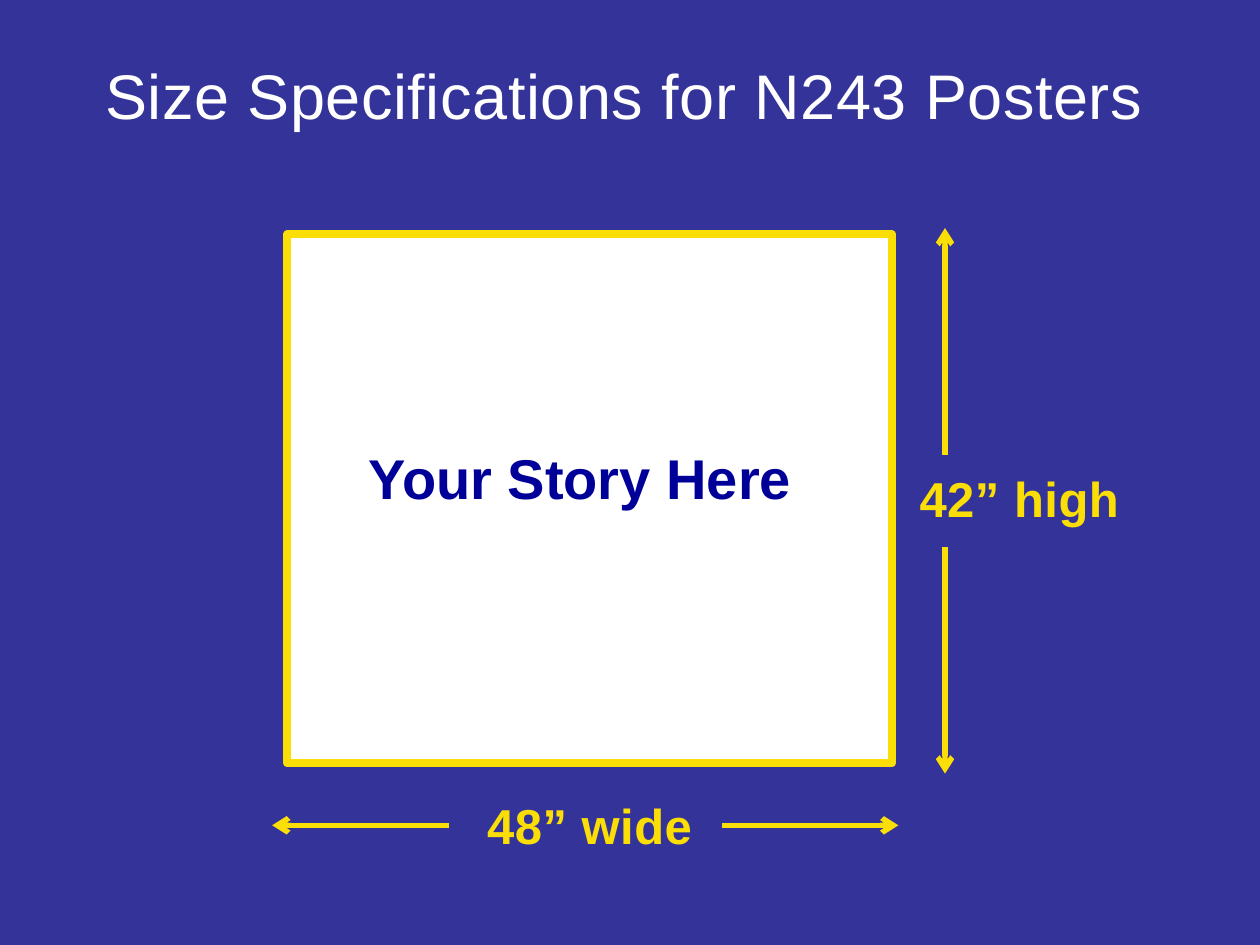
"""Build the poster size specification slide."""
import pptx
import pptx.dml.color
import pptx.enum.shapes
import pptx.enum.text
import pptx.oxml.ns
import pptx.util
from lxml import etree

Inches = pptx.util.Inches
Pt = pptx.util.Pt
RGBColor = pptx.dml.color.RGBColor
Align = pptx.enum.text.PP_ALIGN
Anchor = pptx.enum.text.MSO_ANCHOR
qn = pptx.oxml.ns.qn

INDIGO = RGBColor(0x33, 0x33, 0x99)
NAVY = RGBColor(0x00, 0x00, 0x99)
YELLOW = RGBColor(0xFB, 0xDE, 0x05)
WHITE = RGBColor(0xFF, 0xFF, 0xFF)


class PosterSlide:
    def __init__(self, slide):
        self.slide = slide
        self.font_name = "Arial"
        self.accent = YELLOW
        slide.background.fill.solid()
        slide.background.fill.fore_color.rgb = INDIGO

    def label(self, words, left, top, width, height, size, color, bold=True,
              align=Align.CENTER, anchor=Anchor.TOP, before=6, spacing=30):
        box = self.slide.shapes.add_textbox(
            Inches(left), Inches(top), Inches(width), Inches(height))
        frame = box.text_frame
        frame.word_wrap = True
        frame.vertical_anchor = anchor
        paragraph = frame.paragraphs[0]
        paragraph.alignment = align
        paragraph.space_before = Pt(before)
        paragraph.font.name = self.font_name
        paragraph.font.size = Pt(size)
        paragraph.font.bold = bold
        paragraph.font.color.rgb = color
        run = paragraph.add_run()
        run.text = words
        run._r.get_or_add_rPr().set("spc", str(spacing))

    def panel(self, left, top, width, height):
        poster = self.slide.shapes.add_shape(
            pptx.enum.shapes.MSO_SHAPE.RECTANGLE,
            Inches(left), Inches(top), Inches(width), Inches(height))
        poster.shadow.inherit = False
        poster.fill.solid()
        poster.fill.fore_color.rgb = WHITE
        poster.line.color.rgb = self.accent
        poster.line.width = Pt(4.5)

    def arrow(self, start, end):
        arrow = self.slide.shapes.add_connector(
            pptx.enum.shapes.MSO_CONNECTOR.STRAIGHT,
            *(Inches(value) for value in (*start, *end)))
        arrow.line.color.rgb = self.accent
        arrow.line.width = Pt(3)
        etree.SubElement(arrow.line._get_or_add_ln(), qn("a:tailEnd"), type="arrow")
        etree.SubElement(arrow._element.spPr, qn("a:effectLst"))


def main():
    deck = pptx.Presentation()
    deck.slide_width, deck.slide_height = Inches(10), Inches(7.5)
    poster = PosterSlide(deck.slides.add_slide(deck.slide_layouts[6]))

    poster.label("Size Specifications for N243 Posters",
                 0.33, 0.4, 9.25, 0.71, 36, WHITE, bold=False)
    poster.panel(2.28, 1.86, 4.8, 4.2)
    poster.label("48” wide", 3.48, 6.26, 2.4, 0.57, 28, YELLOW, anchor=Anchor.MIDDLE)
    poster.label("42” high", 6.89, 3.67, 2.4, 0.57, 28, YELLOW)

    width_y, height_x = 6.55, 7.5
    for start, end in ((5.73, 7.13), (3.56, 2.16)):
        poster.arrow((start, width_y), (end, width_y))
    for start, end in ((3.61, 1.81), (4.34, 6.14)):
        poster.arrow((height_x, start), (height_x, end))

    poster.label("Your Story Here", 2.83, 3.47, 3.7, 1.18, 32, NAVY,
                 align=Align.LEFT, before=0, spacing=0)
    deck.save("out.pptx")


if __name__ == "__main__":
    main()
